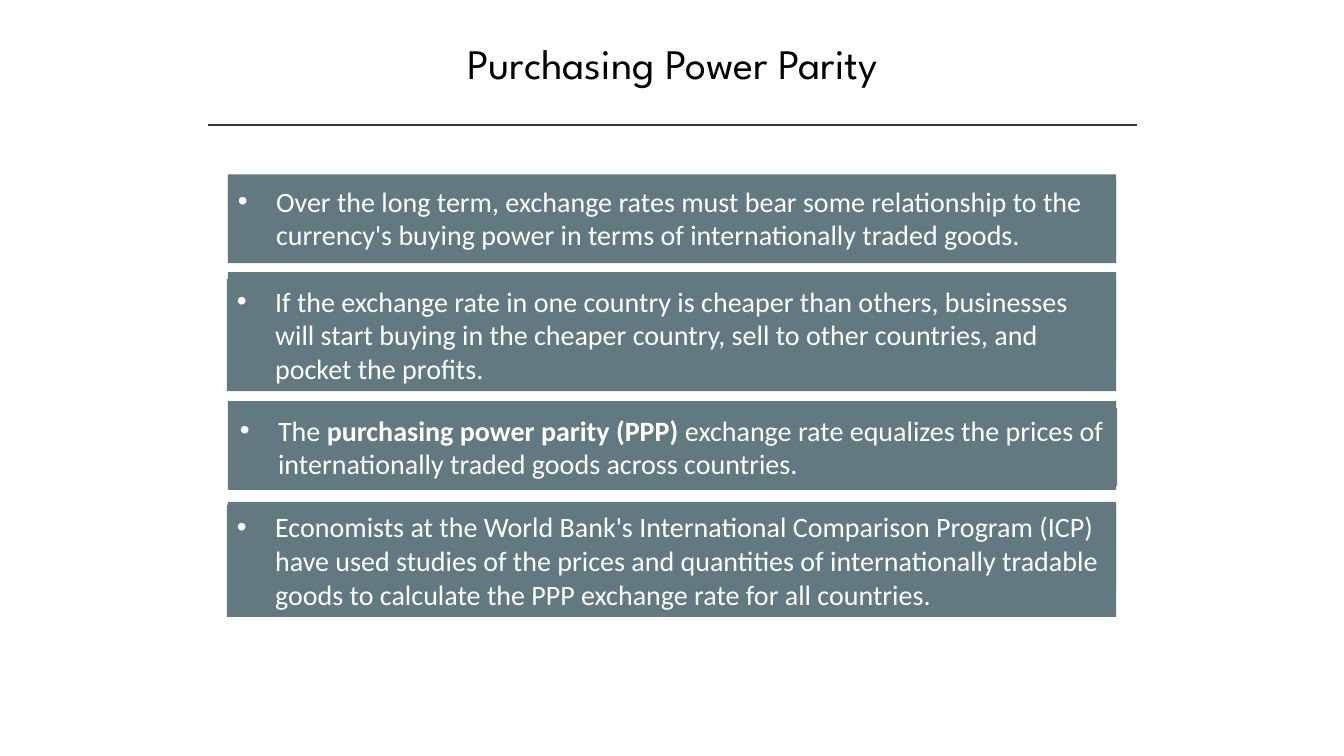
"""Build the Purchasing Power Parity slide."""
from pptx import Presentation
from pptx.dml.color import RGBColor
from pptx.enum import shapes, text
from pptx.oxml import parse_xml
from pptx.oxml.ns import nsdecls
from pptx.util import Pt

PX = 9144
SLATE = RGBColor(0x62, 0x79, 0x81)
CHARCOAL = RGBColor(0x32, 0x35, 0x42)
BLACK = RGBColor(0, 0, 0)
WHITE = RGBColor(255, 255, 255)

HEADING = "Purchasing Power Parity"
PANEL_LEFT, PANEL_WIDTH, PANEL_HEIGHT = 226, 881, 88
INDENT = 38
# Each card: panel top, text box (left, top, width, height), runs (words, bold)
CARDS = [
    (173, (226, 178, 881, 77), [
        ("Over the long term, exchange rates must bear some relationship to the "
         "currency's buying power in terms of internationally traded goods.", False)]),
    (270, (225, 277, 882, 111), [
        ("If the exchange rate in one country is cheaper than others, businesses "
         "will start buying in the cheaper country, sell to other countries, and "
         "pocket the profits.", False)]),
    (398, (228, 405, 880, 77), [
        ("The ", False),
        ("purchasing power parity (PPP) ", True),
        ("exchange rate equalizes the prices of internationally traded goods "
         "across countries.", False)]),
    (498, (225, 501, 882, 111), [
        ("Economists at the World Bank's International Comparison Program (ICP) "
         "have used studies of the prices and quantities of internationally "
         "tradable goods to calculate the PPP exchange rate for all countries.", False)]),
]


def px(*lengths):
    return [length * PX for length in lengths]


def add_block(group, box):
    block = group.shapes.add_shape(shapes.MSO_SHAPE.RECTANGLE, *px(*box))
    block.shadow.inherit = False
    block.fill.solid()
    block.fill.fore_color.rgb = SLATE
    block.line.fill.background()
    return block


def style(font, name, size, color):
    font.name, font.size, font.color.rgb = name, Pt(size), color


def add_card(slide, panel_top, box, runs):
    card = slide.shapes.add_group_shape()
    add_block(card, (PANEL_LEFT, panel_top, PANEL_WIDTH, PANEL_HEIGHT))
    frame = add_block(card, box).text_frame
    frame.word_wrap = True
    frame.auto_size = text.MSO_AUTO_SIZE.SHAPE_TO_FIT_TEXT
    frame.vertical_anchor = text.MSO_ANCHOR.TOP
    point = frame.paragraphs[0]
    point.alignment = text.PP_ALIGN.LEFT
    style(point.font, "Calibri", 20, WHITE)
    for words, bold in runs:
        run = point.add_run()
        run.text = words
        style(run.font, "Calibri", 20, WHITE)
        run.font.bold = bold
    props = point._p.get_or_add_pPr()
    props.set("marL", str(INDENT * PX))
    props.set("indent", str(-INDENT * PX))
    for position, bullet in enumerate(('<a:buFont %s typeface="Arial"/>',
                                       '<a:buChar %s char="•"/>')):
        props.insert(position, parse_xml(bullet % nsdecls("a")))


def main():
    deck = Presentation()
    deck.slide_width, deck.slide_height = px(1333, 750)
    slide = deck.slides.add_slide(deck.slide_layouts[5])

    title = slide.shapes.title
    title.left, title.top, title.width, title.height = px(167, 32, 1000, 61)
    title.text_frame.text = HEADING
    title.text_frame.auto_size = text.MSO_AUTO_SIZE.SHAPE_TO_FIT_TEXT
    title.text_frame.vertical_anchor = text.MSO_ANCHOR.TOP
    heading = title.text_frame.paragraphs[0]
    heading.alignment = text.PP_ALIGN.CENTER
    style(heading.font, "League Spartan", 30, BLACK)

    rule = slide.shapes.add_connector(shapes.MSO_CONNECTOR.STRAIGHT,
                                      *px(206, 124, 1128, 124))
    rule.line.color.rgb = CHARCOAL
    rule.line.width = Pt(1)
    rule._element.spPr.append(parse_xml("<a:effectLst %s/>" % nsdecls("a")))

    for card in CARDS:
        add_card(slide, *card)
    deck.save("out.pptx")


if __name__ == "__main__":
    main()
